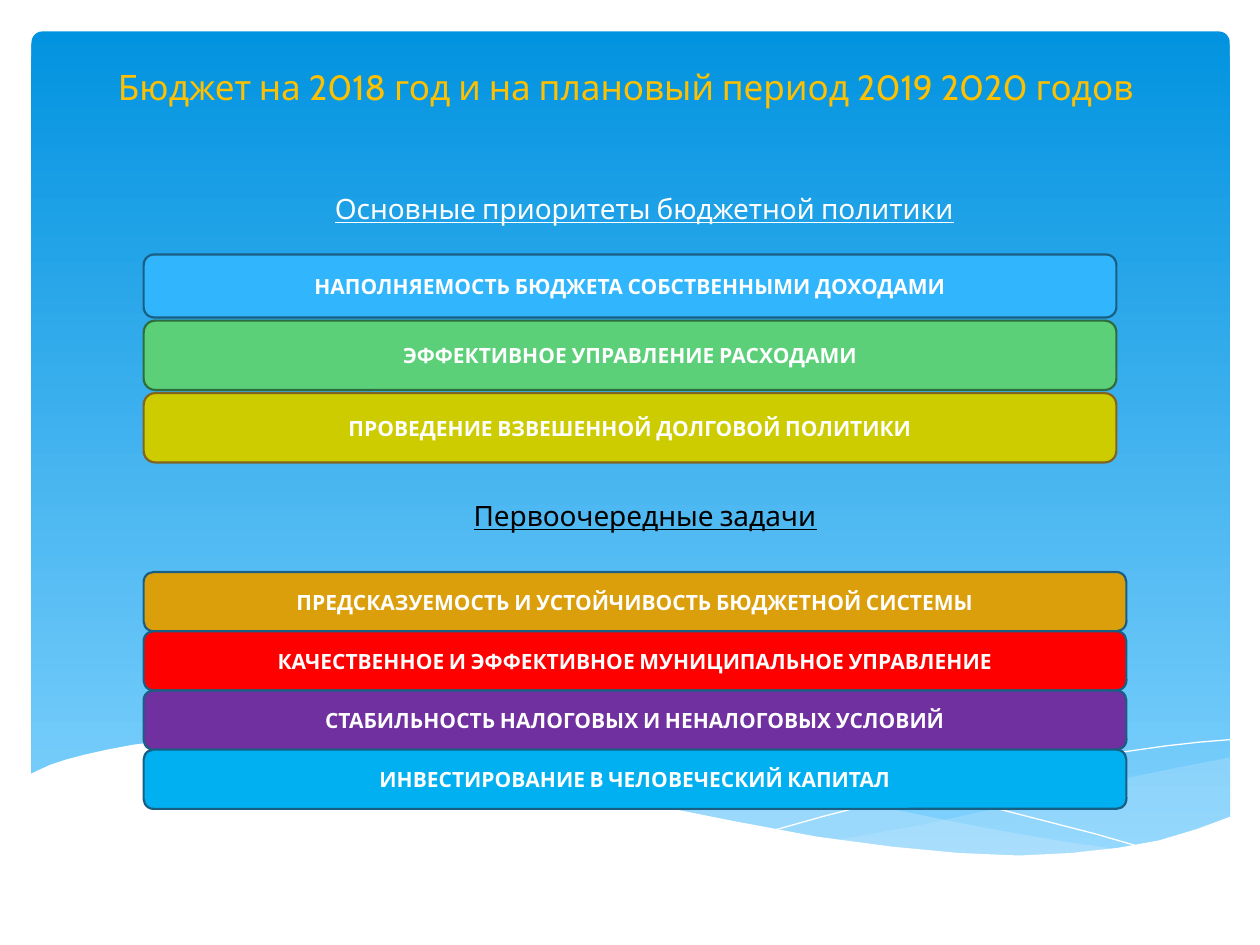
from lxml.etree import SubElement
from pptx import Presentation
from pptx.dml.color import RGBColor
from pptx.enum.shapes import MSO_SHAPE
from pptx.enum.text import MSO_ANCHOR, MSO_AUTO_SIZE, PP_ALIGN
from pptx.oxml.ns import qn
from pptx.util import Inches, Pt

FONT = "Cabin"
WHITE = RGBColor(0xFF, 0xFF, 0xFF)
BLACK = RGBColor(0, 0, 0)
GOLD = RGBColor(0xFF, 0xC0, 0x00)
SKY_TOP = RGBColor(0x02, 0x93, 0xE0)
SKY_END = RGBColor(0x83, 0xD3, 0xFE)
MIST = RGBColor(0xC6, 0xE7, 0xFC)
NAVY = RGBColor(0x19, 0x5F, 0x84)
BLUE = RGBColor(0x31, 0xB6, 0xFD)
GREEN = RGBColor(0x5B, 0xD0, 0x78)
PINE = RGBColor(0x2F, 0x6D, 0x3F)
OLIVE = RGBColor(0xCC, 0xCC, 0x00)
BROWN = RGBColor(0x80, 0x64, 0x21)
OCHRE = RGBColor(0xDC, 0x9F, 0x0C)
RED = RGBColor(0xFF, 0, 0)
PURPLE = RGBColor(0x70, 0x30, 0xA0)
CYAN = RGBColor(0x00, 0xB0, 0xF0)

TITLE = "Бюджет на 2018 год и на плановый период 2019 2020 годов"
GOALS_HEAD = "Основные приоритеты бюджетной политики"
TASKS_HEAD = "Первоочередные задачи"
GOALS = [
    ("НАПОЛНЯЕМОСТЬ БЮДЖЕТА СОБСТВЕННЫМИ ДОХОДАМИ", BLUE, NAVY, 0.5),
    ("ЭФФЕКТИВНОЕ УПРАВЛЕНИЕ РАСХОДАМИ", GREEN, PINE, 0.55),
    ("ПРОВЕДЕНИЕ ВЗВЕШЕННОЙ ДОЛГОВОЙ ПОЛИТИКИ", OLIVE, BROWN, 0.55),
]
TASKS = [
    ("ПРЕДСКАЗУЕМОСТЬ И УСТОЙЧИВОСТЬ БЮДЖЕТНОЙ СИСТЕМЫ", OCHRE, NAVY, 0.47),
    ("КАЧЕСТВЕННОЕ И ЭФФЕКТИВНОЕ МУНИЦИПАЛЬНОЕ УПРАВЛЕНИЕ", RED, NAVY, 0.47),
    ("СТАБИЛЬНОСТЬ НАЛОГОВЫХ И НЕНАЛОГОВЫХ УСЛОВИЙ", PURPLE, NAVY, 0.47),
    ("ИНВЕСТИРОВАНИЕ В ЧЕЛОВЕЧЕСКИЙ КАПИТАЛ", CYAN, NAVY, 0.47),
]
# Each stack: left, top, width, gap, bars
STACKS = [(1.14, 2.02, 7.72, 0.025, GOALS), (1.14, 4.54, 7.8, 0, TASKS)]

# Wave points in hundredths of an inch; opacity in percent, None for a bare line
WAVES = [
    (MIST, 29, [
        (977, 601), (936, 609), (892, 618), (834, 632), (780, 644), (730, 655),
        (662, 667), (692, 671), (733, 676), (770, 679), (815, 680), (855, 678),
        (890, 674), (922, 667), (951, 659), (977, 649)]),
    (MIST, 40, [
        (894, 675), (838, 667), (776, 656), (707, 642), (630, 624), (584, 613),
        (542, 604), (502, 598), (465, 593), (420, 589), (380, 587), (345, 588),
        (314, 590), (287, 593), (323, 598), (363, 604), (405, 613), (450, 624),
        (491, 634), (530, 642), (567, 650), (602, 657), (651, 666), (696, 672),
        (737, 677), (774, 679), (808, 680), (849, 679), (877, 677)]),
    (WHITE, None, [
        (310, 597), (329, 594), (353, 591), (388, 589), (433, 589), (469, 590),
        (511, 594), (557, 598), (609, 606), (666, 615), (728, 628), (796, 643),
        (870, 662), (908, 673)]),
    (WHITE, None, [
        (614, 659), (653, 648), (696, 637), (749, 625), (807, 612), (867, 600),
        (897, 596), (925, 592), (952, 589), (976, 587)]),
    (WHITE, 100, [
        (977, 648), (950, 658), (920, 667), (887, 673), (850, 677), (809, 679),
        (761, 677), (708, 672), (648, 664), (579, 651), (529, 641), (475, 629),
        (418, 615), (365, 604), (316, 596), (271, 590), (230, 587), (193, 586),
        (161, 586), (132, 588), (106, 591), (85, 595), (67, 599), (52, 603),
        (40, 607), (29, 612), (23, 615), (23, 731), (977, 731)]),
]


def place(shape, *box):
    for name, size in zip(("left", "top", "width", "height"), box):
        setattr(shape, name, Inches(size))


def write(shape, text, size, color, anchor, **style):
    frame = shape.text_frame
    frame.word_wrap = True
    frame.auto_size = MSO_AUTO_SIZE.NONE
    frame.vertical_anchor = anchor
    para = frame.paragraphs[0]
    para.alignment = PP_ALIGN.CENTER
    run = para.add_run()
    run.text = text
    run.font.color.rgb = color
    for name, value in dict(name=FONT, size=Pt(size), **style).items():
        setattr(run.font, name, value)


def draw_bar(shapes, *box):
    bar = shapes.add_shape(MSO_SHAPE.ROUNDED_RECTANGLE, *map(Inches, box))
    bar.shadow.inherit = False
    return bar


def draw_sky(shapes):
    sky = draw_bar(shapes, 0.25, 0.25, 9.51, 6.6)
    sky.adjustments[0] = 0.013
    sky.line.fill.background()
    sky.fill.gradient()
    sky.fill.gradient_angle = 270
    for stop, color, spot in zip(sky.fill.gradient_stops, (SKY_TOP, SKY_END), (0, 1)):
        stop.color.rgb = color
        stop.position = spot


def draw_wave(shapes, color, opacity, points):
    line = opacity is None
    pen = shapes.build_freeform(*points[0], scale=Inches(0.01))
    pen.add_line_segments(points[1:], close=not line)
    wave = pen.convert_to_shape()
    wave.shadow.inherit = False
    if line:
        wave.fill.background()
        wave.line.color.rgb = color
        wave.line.width = Pt(0)
        return
    wave.line.fill.background()
    wave.fill.solid()
    wave.fill.fore_color.rgb = color
    if opacity < 100:
        tint = wave.fill._xPr.find(qn("a:solidFill"))[0]
        SubElement(tint, qn("a:alpha"), val=str(opacity * 1000))


def draw_stack(shapes, left, top, width, gap, bars):
    for text, color, edge, height in bars:
        bar = draw_bar(shapes, left, top, width, height)
        bar.fill.solid()
        bar.fill.fore_color.rgb = color
        bar.line.color.rgb = edge
        bar.line.width = Pt(1.25)
        write(bar, text, 12, WHITE, MSO_ANCHOR.MIDDLE, bold=True)
        top += height + gap


def main():
    deck = Presentation()
    deck.slide_width, deck.slide_height = Inches(10), Inches(7.5)
    slide = deck.slides.add_slide(deck.slide_layouts[0])
    shapes = slide.shapes
    title, head = slide.placeholders
    draw_sky(shapes)
    for wave in WAVES:
        draw_wave(shapes, *wave)

    for holder in (title, head):  # bring the text in front of the backdrop
        shapes._spTree.append(holder._element)
    place(title, 0.67, 0.52, 8.59, 0.38)
    write(title, TITLE, 20, GOLD, MSO_ANCHOR.BOTTOM)
    place(head, 0.82, 1.47, 8.59, 0.38)
    write(head, GOALS_HEAD, 16, WHITE, MSO_ANCHOR.TOP, underline=True)
    tasks = shapes.add_textbox(*map(Inches, (2.01, 3.91, 6.22, 0.37)))
    write(tasks, TASKS_HEAD, 16, BLACK, MSO_ANCHOR.TOP, underline=True)
    for stack in STACKS:
        draw_stack(shapes, *stack)
    deck.save("out.pptx")


if __name__ == "__main__":
    main()
